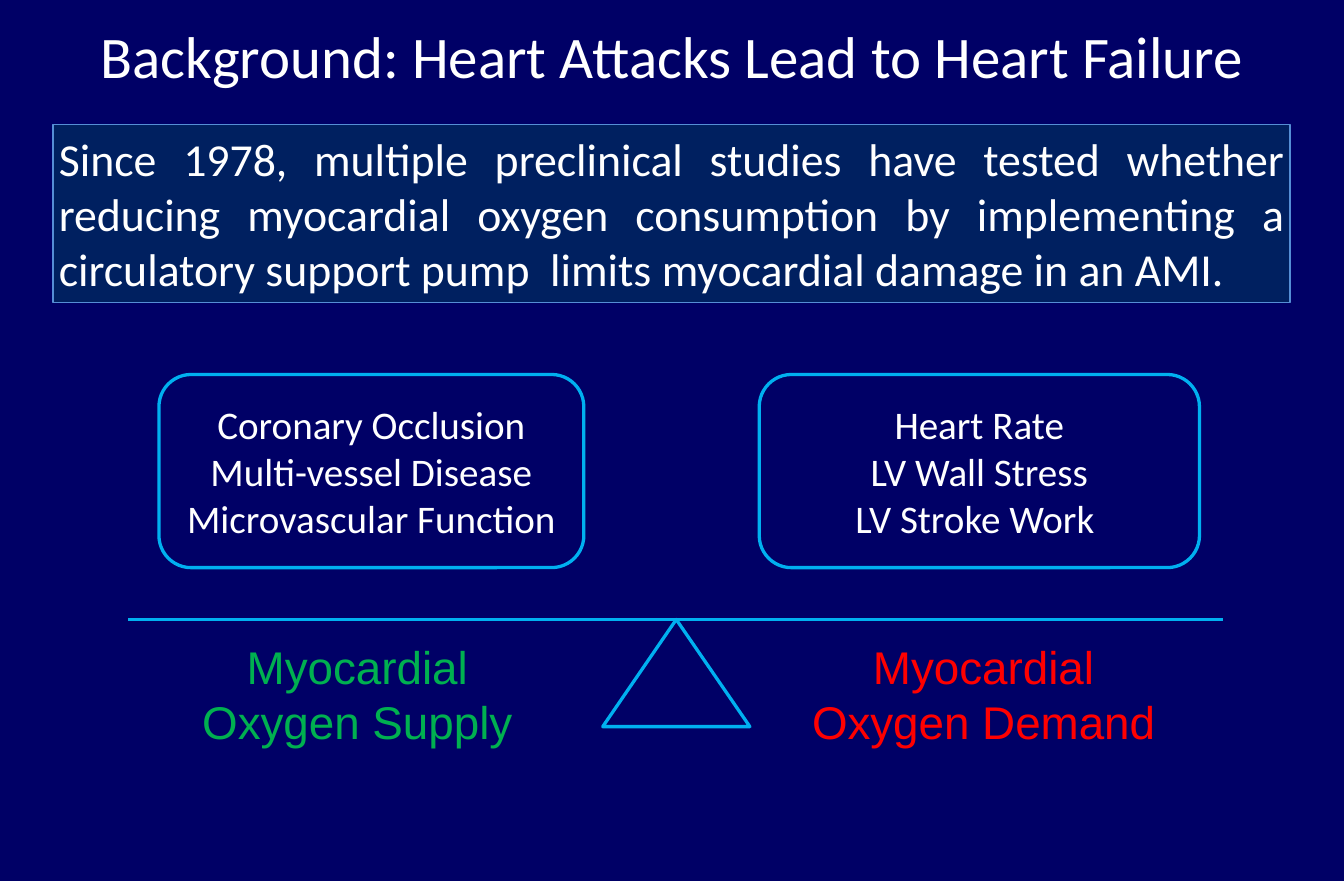
import pptx
import pptx.dml.color
import pptx.enum.shapes
import pptx.enum.text
import pptx.oxml.ns
import pptx.util
from lxml import etree
from pptx.util import Inches

COLORS = {
    "navy": "000066",
    "panel": "002060",
    "panel_edge": "558ED5",
    "cyan": "00B0F0",
    "white": "FFFFFF",
    "supply": "00B050",
    "demand": "FF0000",
}
SHAPES = pptx.enum.shapes.MSO_SHAPE
ALIGN = pptx.enum.text.PP_ALIGN
ANCHOR = pptx.enum.text.MSO_ANCHOR
CM_PER_INCH = 2.54


def rgb(name):
    return pptx.dml.color.RGBColor.from_string(COLORS[name])


def add_box(kind, left, top, width, height, lines=(), size=28, font="Calibri",
            color="white", align=ALIGN.CENTER, anchor=ANCHOR.TOP,
            fill=None, edge=None, edge_width=2):
    """Add a preset shape, or a text box when kind is None, one paragraph per line."""
    place = [Inches(value) for value in (left, top, width, height)]
    if kind is None:
        box = page.shapes.add_textbox(*place)
    else:
        box = page.shapes.add_shape(kind, *place)
        box.shadow.inherit = False
    if fill:
        box.fill.solid()
        box.fill.fore_color.rgb = rgb(fill)
    else:
        box.fill.background()
    if edge:
        box.line.color.rgb = rgb(edge)
        box.line.width = pptx.util.Pt(edge_width)
    else:
        box.line.fill.background()
    frame = box.text_frame
    frame.word_wrap = True
    frame.vertical_anchor = anchor
    for index, line in enumerate(lines):
        para = frame.add_paragraph() if index else frame.paragraphs[0]
        para.text = line
        para.alignment = align
        para.font.size = pptx.util.Pt(size)
        para.font.name = font
        para.font.color.rgb = rgb(color)
    return box


# The page measures 29 by 19 centimetres
page_width = 29 / CM_PER_INCH
deck = pptx.Presentation()
deck.slide_width = Inches(page_width)
deck.slide_height = Inches(19 / CM_PER_INCH)
page = deck.slides.add_slide(deck.slide_layouts[6])
page.background.fill.solid()
page.background.fill.fore_color.rgb = rgb("navy")

# Summary panel
summary = add_box(
    SHAPES.RECTANGLE, 0.45, 1.06, 10.51, 1.51,
    ["Since 1978, multiple preclinical studies have tested whether reducing "
     "myocardial oxygen consumption by implementing a circulatory support pump  "
     "limits myocardial damage in an AMI. "],
    align=ALIGN.JUSTIFY, fill="panel", edge="panel_edge", edge_width=0.75)
summary.text_frame.margin_left = summary.text_frame.margin_right = Inches(0.05)

# Factors resting on each side of the balance
factors = [
    (6.45, 3.74, ["Heart Rate", "LV Wall Stress", "LV Stroke Work "]),
    (1.35, 3.61, ["Coronary Occlusion", "Multi-vessel Disease", "Microvascular Function"]),
]
for left, width, lines in factors:
    add_box(SHAPES.ROUNDED_RECTANGLE, left, 3.18, width, 1.64, lines,
            size=23.9, anchor=ANCHOR.MIDDLE, edge="cyan")

# Balance beam and its pivot
beam_y = 5.26
beam = page.shapes.add_connector(
    pptx.enum.shapes.MSO_CONNECTOR.STRAIGHT,
    Inches(1.09), Inches(beam_y), Inches(10.39), Inches(beam_y))
beam.line.color.rgb = rgb("cyan")
beam.line.width = pptx.util.Pt(2.25)
etree.SubElement(beam._element.spPr, pptx.oxml.ns.qn("a:effectLst"))
add_box(SHAPES.ISOSCELES_TRIANGLE, 5.12, beam_y, 1.25, 0.91, edge="cyan")

# Labels under the beam
for left, last_line, color in [(1.33, "Oxygen Supply", "supply"),
                               (6.65, "Oxygen Demand", "demand")]:
    add_box(None, left, 5.37, 3.41, 1.04, ["Myocardial", last_line],
            font="Arial", color=color)

# Title
add_box(SHAPES.RECTANGLE, 0, 0.12, page_width, 0.71,
        ["Background: Heart Attacks Lead to Heart Failure"], size=36, fill="navy")

deck.save("out.pptx")
